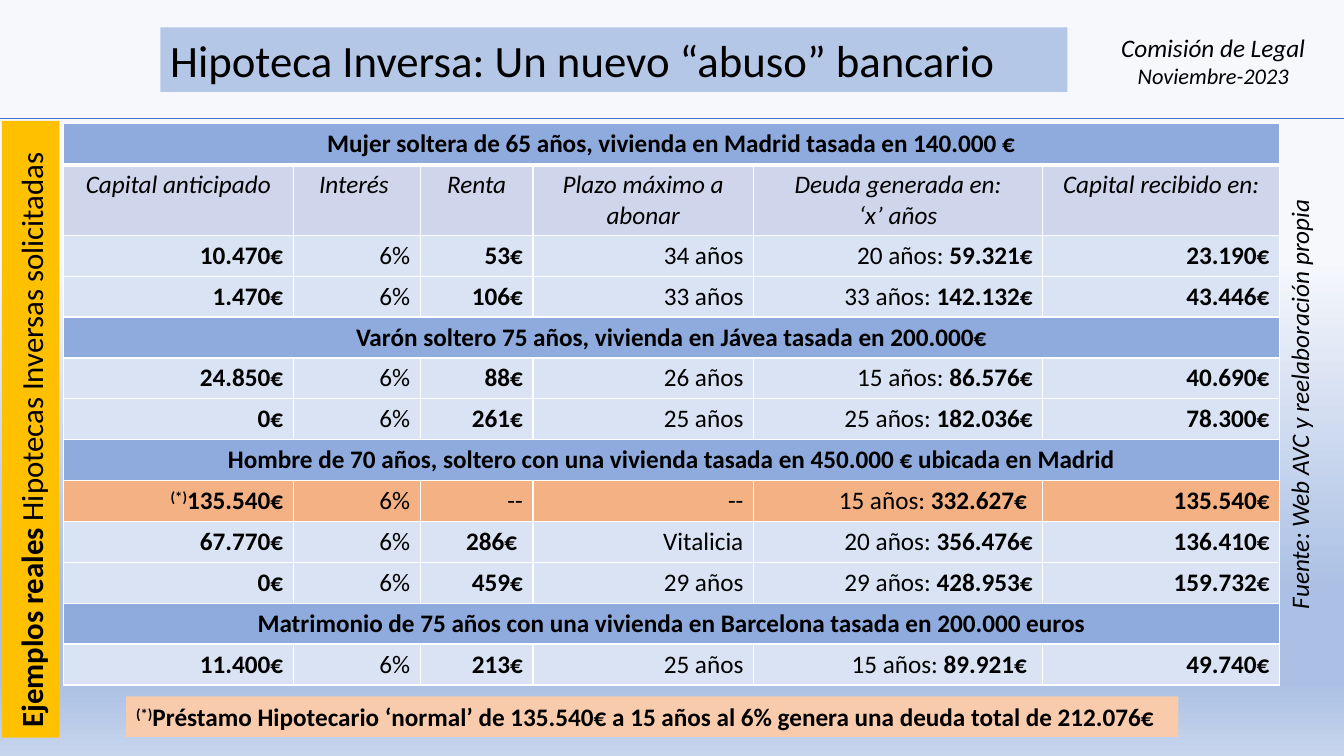
from dataclasses import dataclass

from lxml import etree
from pptx import Presentation
from pptx.dml.color import RGBColor
from pptx.enum.shapes import MSO_CONNECTOR, MSO_SHAPE
from pptx.enum.text import MSO_ANCHOR, MSO_AUTO_SIZE, PP_ALIGN
from pptx.oxml.ns import qn
from pptx.util import Cm, Pt

LEFT, CENTER, RIGHT = PP_ALIGN.LEFT, PP_ALIGN.CENTER, PP_ALIGN.RIGHT
RECTANGLE, STRAIGHT = MSO_SHAPE.RECTANGLE, MSO_CONNECTOR.STRAIGHT
MIDDLE, GROW = MSO_ANCHOR.MIDDLE, MSO_AUTO_SIZE.SHAPE_TO_FIT_TEXT


@dataclass(frozen=True)
class Theme:
    font: str = "Calibri"
    ink: str = "000000"
    title_fill: str = "B4C7E7"
    rule: str = "4472C4"
    side_fill: str = "FFC000"
    case_fill: str = "8FAADC"
    header_fill: str = "CFD5EA"
    row_fill: str = "DAE3F3"
    loan_fill: str = "F4B183"
    note_fill: str = "F8CBAD"
    border: str = "FFFFFF"
    # position, colour, opacity (all percentages but the colour)
    background: tuple = ((34, "F6F8FC", 100), (78, "ABC0E4", 81),
                         (90, "ABC0E4", 100), (100, "C7D5ED", 100))
    title_size: int = 32
    side_size: int = 22
    body_size: int = 18
    date_size: int = 16


THEME = Theme()
SLIDE_WIDTH, SLIDE_HEIGHT = 33.87, 19.05
MARK = "(*)"
COLUMN_WIDTHS = (5.79, 3.2, 2.84, 5.56, 7.29, 5.97)
ROW_HEIGHT, HEADER_HEIGHT = 1.03, 1.77
HEADINGS = ("Capital anticipado", "Interés ", "Renta", "Plazo máximo a abonar",
            "Deuda generada en:\n‘x’ años", "Capital recibido en:")
CASES = (
    ("Mujer soltera de 65 años, vivienda en Madrid tasada en 140.000 €", (
        ("10.470€", "6%", "53€", "34 años", "20 años: 59.321€", "23.190€"),
        ("1.470€", "6%", "106€", "33 años", "33 años: 142.132€", "43.446€"))),
    ("Varón soltero 75 años, vivienda en Jávea tasada en 200.000€", (
        ("24.850€", "6%", "88€", "26 años", "15 años: 86.576€", "40.690€"),
        ("0€", "6%", "261€", "25 años", "25 años: 182.036€", "78.300€"))),
    ("Hombre de 70 años, soltero con una vivienda tasada en 450.000 € ubicada en Madrid", (
        ("(*)135.540€", "6%", "--", "--", "15 años: 332.627€ ", "135.540€"),
        ("67.770€", "6%", "286€ ", "Vitalicia", "20 años: 356.476€", "136.410€"),
        ("0€", "6%", "459€", "29 años", "29 años: 428.953€", "159.732€"))),
    ("Matrimonio de 75 años con una vivienda en Barcelona tasada en 200.000 euros", (
        ("11.400€", "6%", "213€", "25 años", "15 años: 89.921€ ", "49.740€"),)),
)


def rgb(color):
    return RGBColor.from_string(color)


def style_paragraph(paragraph, size, align=LEFT, bold=None, italic=None):
    paragraph.alignment = align
    font = paragraph.font
    font.name, font.size = THEME.font, Pt(size)
    font.bold, font.italic = bold, italic
    font.color.rgb = rgb(THEME.ink)


def add_run(paragraph, text, bold=None):
    run = paragraph.add_run()
    run.text = text
    run.font.bold = bold
    return run


def add_marked_text(paragraph, text, bold=None):
    """Write the text, raising a leading note mark to superscript."""
    if text.startswith(MARK):
        mark = add_run(paragraph, MARK, bold)
        mark.font._element.set("baseline", "30000")
        text = text.removeprefix(MARK)
    add_run(paragraph, text, bold)


def paint_background(slide):
    fill = slide.background.fill
    fill.gradient()
    fill.gradient_angle = 270
    stops = slide.element.find(".//" + qn("a:gsLst"))
    for stop in list(stops):
        stops.remove(stop)
    for position, color, opacity in THEME.background:
        stop = etree.SubElement(stops, qn("a:gs"), pos=str(position * 1000))
        tint = etree.SubElement(stop, qn("a:srgbClr"), val=color)
        if opacity < 100:
            etree.SubElement(tint, qn("a:alpha"), val=str(opacity * 1000))


def prepare_frame(shape, wrap, vertical):
    frame = shape.text_frame
    frame.word_wrap, frame.auto_size = wrap, GROW
    if vertical:
        shape.element.find(".//" + qn("a:bodyPr")).set("vert", "vert270")
    return frame


def add_panel(slide, box, color, wrap=True, vertical=False):
    """Add a filled rectangle and return its first paragraph."""
    panel = slide.shapes.add_shape(RECTANGLE, *map(Cm, box))
    panel.shadow.inherit = False
    panel.fill.solid()
    panel.fill.fore_color.rgb = rgb(color)
    panel.line.fill.background()
    frame = prepare_frame(panel, wrap, vertical)
    frame.vertical_anchor = MIDDLE
    return frame.paragraphs[0]


def add_caption(slide, box, lines, align=LEFT, vertical=False):
    """Add italic text, given as (text, size) lines."""
    caption = slide.shapes.add_textbox(*map(Cm, box))
    frame = prepare_frame(caption, False, vertical)
    for index, (text, size) in enumerate(lines):
        paragraph = frame.add_paragraph() if index else frame.paragraphs[0]
        add_run(paragraph, text)
        style_paragraph(paragraph, size, align, italic=True)


def add_rule(slide, top):
    rule = slide.shapes.add_connector(STRAIGHT, 0, Cm(top), Cm(SLIDE_WIDTH), Cm(top))
    rule.line.color.rgb = rgb(THEME.rule)
    rule.line.width = Pt(0.5)
    etree.SubElement(rule.element.spPr, qn("a:effectLst"))


def format_cell(cell, color, top=1, bottom=1):
    """Draw the borders, with widths in points, and fill the cell."""
    properties = cell._tc.get_or_add_tcPr()
    for side, width in (("L", 1), ("R", 1), ("T", top), ("B", bottom)):
        line = etree.SubElement(properties, qn("a:ln" + side), w=str(Pt(width)))
        solid = etree.SubElement(line, qn("a:solidFill"))
        etree.SubElement(solid, qn("a:srgbClr"), val=THEME.border)
    cell.fill.solid()
    cell.fill.fore_color.rgb = rgb(color)


def write_case(cells, title, bottom):
    cells[0].merge(cells[-1])
    for cell in cells:
        format_cell(cell, THEME.case_fill, bottom=bottom)
    paragraph = cells[0].text_frame.paragraphs[0]
    add_run(paragraph, title)
    style_paragraph(paragraph, THEME.body_size, CENTER, bold=True)


def write_headings(cells):
    for cell, heading in zip(cells, HEADINGS):
        format_cell(cell, THEME.header_fill, top=3)
        cell.text_frame.text = heading
        for paragraph in cell.text_frame.paragraphs:
            style_paragraph(paragraph, THEME.body_size, CENTER, bold=False, italic=True)


def write_figures(cells, figures):
    """Write one example; amounts in euros are bold."""
    color = THEME.loan_fill if figures[0].startswith(MARK) else THEME.row_fill
    for cell, figure in zip(cells, figures):
        format_cell(cell, color)
        paragraph = cell.text_frame.paragraphs[0]
        term, colon, amount = figure.rpartition(": ")
        if term:
            add_run(paragraph, term + colon, False)
        add_marked_text(paragraph, amount, "€" in amount)
        style_paragraph(paragraph, THEME.body_size, RIGHT)


def add_examples(slide, left, top):
    row_count = 1 + sum(1 + len(examples) for _, examples in CASES)
    height = HEADER_HEIGHT + ROW_HEIGHT * (row_count - 1)
    table = slide.shapes.add_table(row_count, len(COLUMN_WIDTHS), Cm(left), Cm(top),
                                   Cm(sum(COLUMN_WIDTHS)), Cm(height)).table
    table.first_row = table.horz_banding = False
    for column, width in zip(table.columns, COLUMN_WIDTHS):
        column.width = Cm(width)
    for index, row in enumerate(table.rows):
        row.height = Cm(HEADER_HEIGHT if index == 1 else ROW_HEIGHT)
    rows = iter([list(row.cells) for row in table.rows])
    for index, (title, examples) in enumerate(CASES):
        write_case(next(rows), title, bottom=1 if index else 3)
        if index == 0:
            write_headings(next(rows))
        for figures in examples:
            write_figures(next(rows), figures)


def main():
    deck = Presentation()
    deck.slide_width, deck.slide_height = Cm(SLIDE_WIDTH), Cm(SLIDE_HEIGHT)
    slide = deck.slides.add_slide(deck.slide_layouts[6])
    paint_background(slide)

    title = add_panel(slide, (4.04, 0.69, 22.86, 1.63), THEME.title_fill)
    add_run(title, "Hipoteca Inversa: Un nuevo “abuso” bancario")
    style_paragraph(title, THEME.title_size)
    add_caption(slide, (27.97, 0.69, 5.21, 1.7),
                (("Comisión de Legal", THEME.body_size),
                 ("Noviembre-2023", THEME.date_size)), CENTER)
    add_rule(slide, 2.97)

    side = add_panel(slide, (0.05, 3.05, 1.45, 15.54), THEME.side_fill, vertical=True)
    add_run(side, "Ejemplos reales ", True)
    add_run(side, "Hipotecas Inversas solicitadas", False)
    style_paragraph(side, THEME.side_size)

    add_examples(slide, 1.6, 3.12)
    add_caption(slide, (32.23, 4.78, 1.27, 10.82),
                (("Fuente: Web AVC y reelaboración propia", THEME.body_size),), vertical=True)

    note = add_panel(slide, (3.18, 17.55, 26.52, 1.02), THEME.note_fill, wrap=False)
    add_marked_text(note, "(*)Préstamo Hipotecario ‘normal’ de 135.540€ a 15 años "
                          "al 6% genera una deuda total de 212.076€")
    style_paragraph(note, THEME.body_size, bold=True)
    deck.save("out.pptx")


if __name__ == "__main__":
    main()
